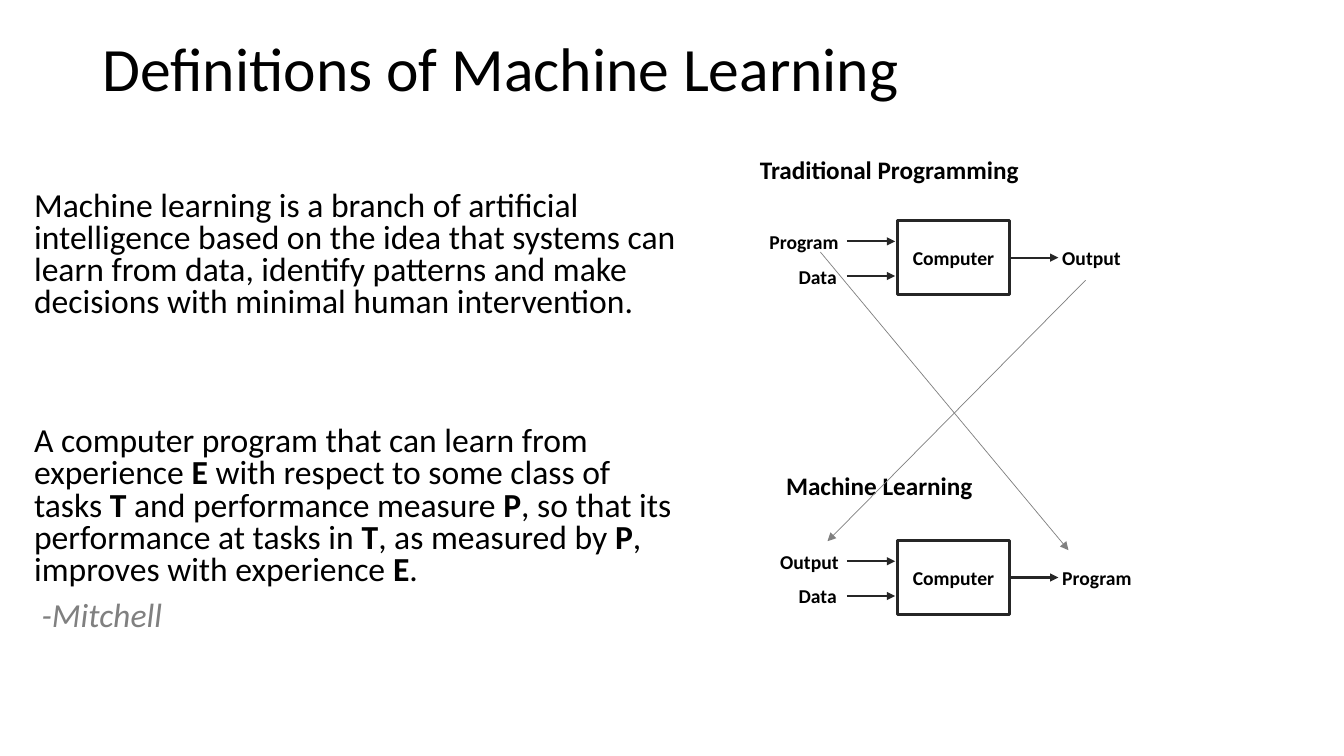
"""Builds the slide that defines machine learning beside a program and data diagram."""
from lxml.etree import SubElement
from pptx import Presentation
from pptx.dml.color import RGBColor
from pptx.enum.shapes import MSO_CONNECTOR, MSO_SHAPE
from pptx.enum.text import MSO_ANCHOR, PP_ALIGN
from pptx.oxml.ns import qn
from pptx.util import Pt

BLACK = RGBColor(0x00, 0x00, 0x00)
DARK = RGBColor(0x26, 0x26, 0x26)
GRAY = RGBColor(0x80, 0x80, 0x80)
FONT = "Calibri"

deck = Presentation()
deck.slide_width, deck.slide_height = Pt(960), Pt(540)
page = deck.slides.add_slide(deck.slide_layouts[6])


def add_text(text, left, top, width, height, size, bold=False, align=PP_ALIGN.LEFT):
    box = page.shapes.add_textbox(Pt(left), Pt(top), Pt(width), Pt(height))
    box.text_frame.word_wrap = True
    box.text_frame.text = text
    para = box.text_frame.paragraphs[0]
    para.alignment = align
    font = para.runs[0].font
    font.name, font.size, font.bold = FONT, Pt(size), bold
    font.color.rgb = BLACK
    return box


def add_arrow(start_x, start_y, end_x, end_y, color, weight):
    arrow = page.shapes.add_connector(
        MSO_CONNECTOR.STRAIGHT, Pt(start_x), Pt(start_y), Pt(end_x), Pt(end_y))
    arrow.line.color.rgb = color
    arrow.line.width = Pt(weight)
    SubElement(arrow.line._get_or_add_ln(), qn("a:tailEnd"), type="triangle")
    SubElement(arrow._element.spPr, qn("a:effectLst"))
    return arrow


title = add_text("Definitions of Machine Learning", 66, 18, 828, 66, 44)
title.text_frame.vertical_anchor = MSO_ANCHOR.MIDDLE
title.text_frame.paragraphs[0].line_spacing = 0.9

definitions = [
    (10, ["Machine learning is a branch of artificial intelligence based on the idea that "
          "systems can learn from data, identify patterns and make decisions with minimal "
          "human intervention."]),
    (76, ["A computer program that can learn from experience ", "E",
          " with respect to some class of tasks ", "T", " and performance measure ", "P",
          ", so that its performance at tasks in ", "T", ", as measured by ", "P",
          ", improves with experience ", "E", "."]),
    (10, [" -Mitchell"]),
]
body = page.shapes.add_textbox(Pt(17.3), Pt(133.2), Pt(476), Pt(342.7))
frame = body.text_frame
frame.word_wrap = True
for index, (space, pieces) in enumerate(definitions):
    para = frame.paragraphs[0] if index == 0 else frame.add_paragraph()
    para.line_spacing = 0.8
    para.space_before = Pt(space)
    for piece in pieces:
        span = para.add_run()
        span.text = piece
        span.font.name, span.font.size = FONT, Pt(24)
        span.font.bold = piece in ("E", "T", "P")
        span.font.color.rgb = BLACK
author = frame.paragraphs[-1].runs[0].font
author.italic = True
author.color.rgb = GRAY

diagrams = [
    ("Traditional Programming", 535.7, 106.6, 0, "Program", "Output"),
    ("Machine Learning", 554.4, 332.6, 228.5, "Output", "Program"),
]
for heading, heading_left, heading_top, shift, source, result in diagrams:
    computer = page.shapes.add_shape(
        MSO_SHAPE.RECTANGLE, Pt(640.8), Pt(157.7 + shift), Pt(80.6), Pt(52.6))
    computer.shadow.inherit = False
    computer.fill.background()
    computer.line.color.rgb = DARK
    computer.line.width = Pt(2.25)
    computer.text_frame.text = "Computer"
    computer.text_frame.word_wrap = False
    computer.text_frame.vertical_anchor = MSO_ANCHOR.MIDDLE
    para = computer.text_frame.paragraphs[0]
    para.alignment = PP_ALIGN.CENTER
    font = para.runs[0].font
    font.name, font.size, font.bold = FONT, Pt(14), True
    font.color.rgb = BLACK

    for label, top, right in ((source, 160.6, 606.2), ("Data", 185.4, 604.8)):
        add_text(label, right - 80, top + shift, 80, 24.5, 14, True, PP_ALIGN.RIGHT)
        add_arrow(605, top + 11.8 + shift, 639.4, top + 11.8 + shift, DARK, 1.5)
    outgoing = add_arrow(721.4, 184 + shift, 756, 184 + shift, DARK, 1.5)
    outgoing.begin_connect(computer, 3)
    add_text(result, 751.7, 172 + shift, 80, 24.5, 14, True)
    add_text(heading, heading_left, heading_top, 216, 29, 18, True)

add_arrow(586, 180, 763.2, 393, GRAY, 0.5)
add_arrow(775.4, 200.2, 591.1, 386.6, GRAY, 0.5)

deck.save("out.pptx")
